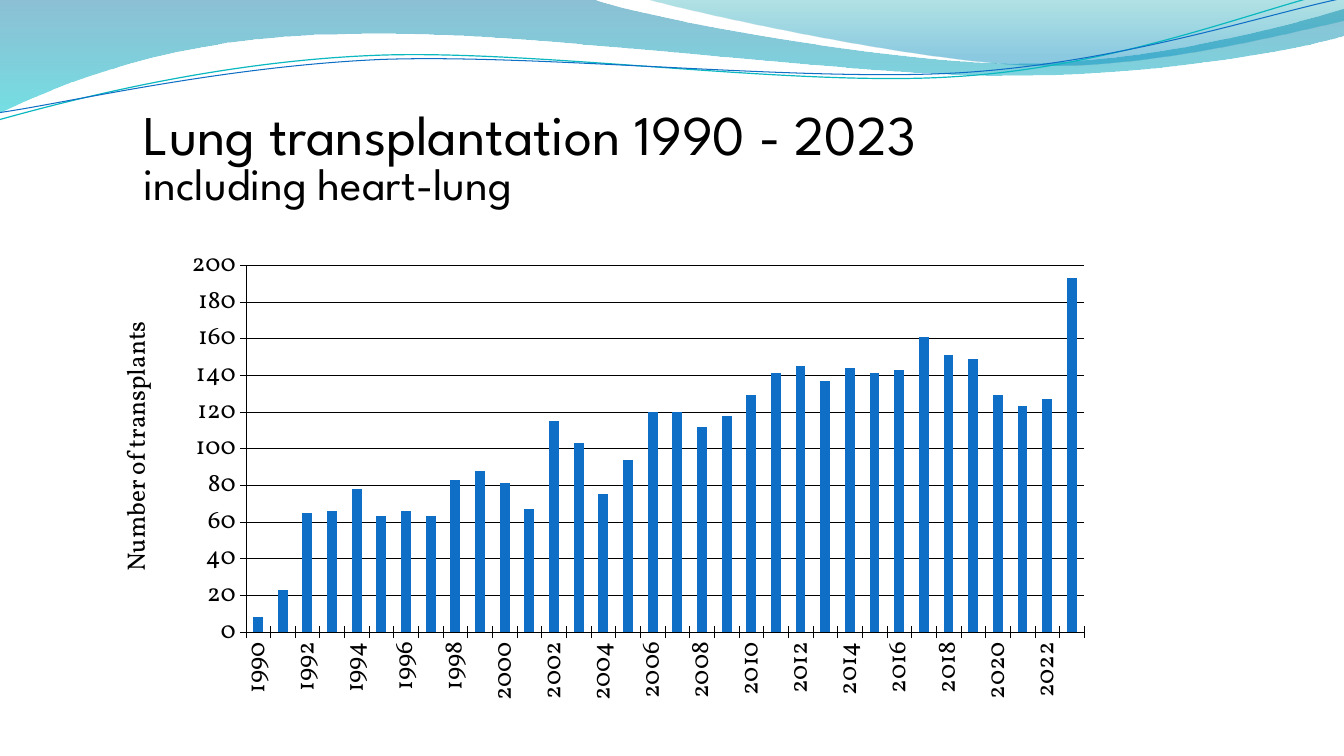
from lxml.etree import SubElement
from pptx import Presentation
from pptx.chart.data import CategoryChartData
from pptx.dml.color import RGBColor
from pptx.enum.chart import XL_CHART_TYPE, XL_TICK_MARK
from pptx.enum.text import MSO_ANCHOR
from pptx.oxml import parse_xml
from pptx.oxml.ns import nsdecls, qn
from pptx.util import Cm, Pt

BLACK = RGBColor(0x00, 0x00, 0x00)
BLUE = RGBColor(0x0F, 0x6F, 0xC6)
TEAL = RGBColor(0x0A, 0xB8, 0xBF)
DEEP_BLUE = RGBColor(0x00, 0x74, 0xA1)
CYAN = RGBColor(0x00, 0xC6, 0xCF)
DARK_TEAL = RGBColor(0x00, 0xA1, 0xA9)
SKY_BLUE = RGBColor(0x00, 0x8B, 0xBF)
TITLE_FONT = "League Spartan"
CHART_FONT = "Vollkorn"

prs = Presentation()
prs.slide_width, prs.slide_height = Cm(33.87), Cm(19.05)
slide = prs.slides.add_slide(prs.slide_layouts[6])


def add_wave(start, segments, close):
    """Draw an outline in cm; 2 numbers are a line, 6 numbers a Bezier curve."""
    points = [(Cm(x), Cm(y)) for segment in segments
              for x, y in zip(segment[::2], segment[1::2])]
    builder = slide.shapes.build_freeform(Cm(start[0]), Cm(start[1]))
    builder.add_line_segments(points, close=close)
    wave = builder.convert_to_shape()
    wave.shadow.inherit = False
    steps = iter(list(wave.element.iter(qn("a:lnTo"))))
    for segment in segments:
        first = next(steps)
        if len(segment) == 6:
            curve = parse_xml(f'<a:cubicBezTo {nsdecls("a")}/>')
            first.addprevious(curve)
            for step in (first, next(steps), next(steps)):
                curve.append(step[0])
                step.getparent().remove(step)
    return wave


# Header bands: start, segments, gradient stops (position, colour, opacity %)
bands = [
    ((0, 0),
     [(14.91, -0.03), (16.1, 0.43, 22.45, 1.6, 25.68, 1.6),
      (28.88, 1.6, 32.44, 0.66, 33.87, 0.23), (33.87, 0.91),
      (33.3, 1.12, 29.44, 1.93, 25.25, 1.91), (21.06, 1.91, 12.93, 0.71, 8.71, 0.87),
      (4.37, 0.91, 1.55, 2.11, -0.05, 2.87)],
     [(0, DEEP_BLUE, 45), (1, CYAN, 55)]),
    ((16.21, -0.03),
     [(17.25, 0.28, 23.09, 1.57, 26.04, 1.65),
      (28.96, 1.75, 32.56, 0.81, 33.87, 0.53), (33.87, 0)],
     [(0, DARK_TEAL, 30), (0.8, SKY_BLUE, 45)]),
]
for start, segments, gradient in bands:
    band = add_wave(start, segments, True)
    band.line.fill.background()
    band.fill.gradient()
    band.fill.gradient_angle = 270
    for stop, (position, color, _) in zip(band.fill.gradient_stops, gradient):
        stop.position = position
        stop.color.rgb = color
    for color_xml, (_, _, opacity) in zip(band.element.spPr.iter(qn("a:srgbClr")), gradient):
        SubElement(color_xml, qn("a:alpha")).set("val", str(opacity * 1000))

strands = [
    ((-0.03, 3.02),
     [(1.6, 2.57, 5.33, 1.57, 9.37, 1.4), (13.39, 1.22, 20.04, 2.21, 24.1, 1.93),
      (28.19, 1.68, 31.78, 0.2, 33.78, -0.25)], TEAL, 0.85),
    ((-0.03, 2.84),
     [(1.57, 2.62, 5.54, 1.68, 9.58, 1.5), (13.64, 1.35, 20.22, 2.08, 24.26, 1.83),
      (28.3, 1.57, 31.88, 0.36, 33.87, -0.05)], BLUE, 0.75),
]
for start, segments, color, width in strands:
    strand = add_wave(start, segments, False)
    strand.fill.background()
    strand.line.color.rgb = color
    strand.line.width = Pt(width)

# Title
title_frame = slide.shapes.add_textbox(Cm(3.37), Cm(2.71), Cm(25.55), Cm(3.18)).text_frame
title_frame.word_wrap = True
title_frame.vertical_anchor = MSO_ANCHOR.TOP
heading = title_frame.paragraphs[0]
heading.line_spacing = 0.8
for text, size in [("Lung transplantation 1990 - 2023", 40), ("including heart-lung", 32)]:
    if heading.runs:
        heading.add_line_break()
    run = heading.add_run()
    run.text = text
    run.font.name = TITLE_FONT
    run.font.size = Pt(size)
    run.font.color.rgb = BLACK

# Chart
transplants = [8, 23, 65, 66, 78, 63, 66, 63, 83, 88, 81, 67, 115, 103, 75, 94, 120,
               120, 112, 118, 129, 141, 145, 137, 144, 141, 143, 161, 151, 149, 129,
               123, 127, 193]
chart_data = CategoryChartData()
chart_data.categories = [str(1990 + i) for i in range(len(transplants))]
chart_data.add_series("Series 1", transplants)
chart = slide.shapes.add_chart(XL_CHART_TYPE.COLUMN_STACKED, Cm(2.3), Cm(5.67),
                               Cm(27.41), Cm(12.17), chart_data).chart
chart.has_legend = False
chart.has_title = False
chart.font.name = CHART_FONT
chart.font.size = Pt(18)
chart.font.color.rgb = BLACK

plot = chart.plots[0]
plot.gap_width = 150
plot.overlap = 100
plot.vary_by_categories = False
bars = plot.series[0].format
bars.fill.solid()
bars.fill.fore_color.rgb = BLUE

years, counts = chart.category_axis, chart.value_axis
counts.minimum_scale, counts.maximum_scale, counts.major_unit = 0, 200, 20
counts.has_major_gridlines = True
for axis in (years, counts):
    axis.major_tick_mark = XL_TICK_MARK.CROSS
    axis.minor_tick_mark = XL_TICK_MARK.NONE
    axis.tick_labels.font.name = CHART_FONT
    axis.tick_labels.font.size = Pt(18)
    axis.tick_labels.font.color.rgb = BLACK
for line in (years.format.line, counts.format.line, counts.major_gridlines.format.line):
    line.color.rgb = BLACK
    line.width = Pt(0.25)

# Vertical year labels, every second one
years_xml = years._element
years_xml.find(qn("c:txPr")).find(qn("a:bodyPr")).set("rot", "-5400000")
label_skip = parse_xml(f'<c:tickLblSkip {nsdecls("c")} val="2"/>')
years_xml.find(qn("c:noMultiLvlLbl")).addprevious(label_skip)

count_title = counts.axis_title.text_frame
title_run = count_title.paragraphs[0].add_run()
title_run.text = "Number of transplants"
title_run.font.name = CHART_FONT
title_run.font.size = Pt(18)
title_run.font.bold = False
title_run.font.color.rgb = BLACK
count_title._txBody.find(qn("a:bodyPr")).set("rot", "-5400000")


def set_layout(element, **values):
    """Give a chart part a manual layout in fractions of the chart."""
    for old in element.findall(qn("c:layout")):
        element.remove(old)
    settings = "".join(f'<c:{key} val="{value}"/>' for key, value in values.items())
    layout = parse_xml(f'<c:layout {nsdecls("c")}><c:manualLayout>{settings}'
                       '</c:manualLayout></c:layout>')
    text = element.find(qn("c:tx"))
    if text is None:
        element.insert(0, layout)
    else:
        text.addnext(layout)


set_layout(counts.axis_title._element, xMode="edge", yMode="edge", x=0.02, y=0.19)
set_layout(chart._chartSpace.chart.plotArea, layoutTarget="inner", xMode="edge",
           yMode="edge", x=0.142, y=0.083, w=0.771, h=0.76)

prs.save("out.pptx")
